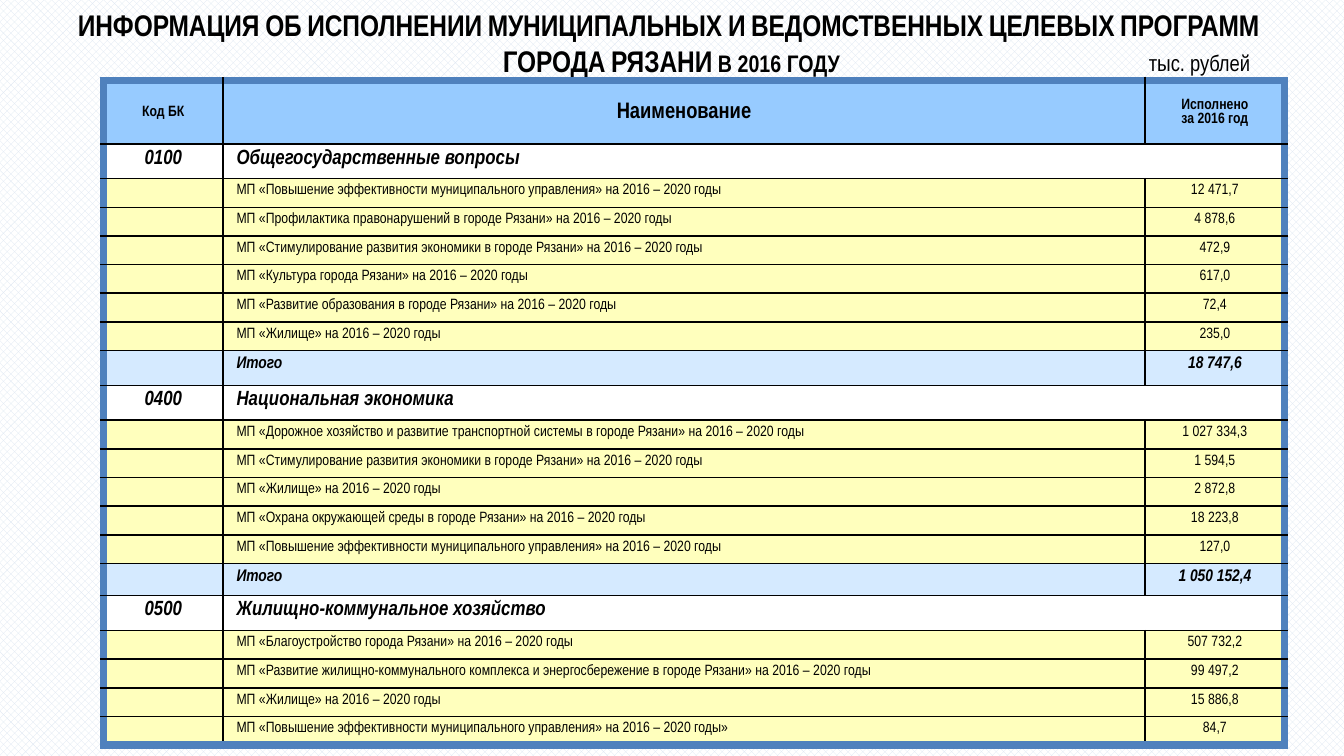
from dataclasses import dataclass

from lxml.etree import SubElement
from pptx import Presentation
from pptx.dml.color import RGBColor
from pptx.enum.dml import MSO_PATTERN
from pptx.enum.text import MSO_ANCHOR, MSO_AUTO_SIZE, PP_ALIGN
from pptx.oxml.ns import qn
from pptx.util import Inches, Pt

FONT = "Arial Narrow"
BLACK = RGBColor(0x00, 0x00, 0x00)
WHITE = RGBColor(0xFF, 0xFF, 0xFF)
FRAME_BLUE = RGBColor(0x4F, 0x81, 0xBD)
HEADER_BLUE = RGBColor(0x97, 0xCB, 0xFF)
TOTAL_BLUE = RGBColor(0xD5, 0xEA, 0xFF)
PROGRAM_YELLOW = RGBColor(0xFF, 0xFF, 0xBD)
PATTERN_BLUE = RGBColor(0xDC, 0xE6, 0xF2)

SLIDE_WIDTH = 10
SLIDE_HEIGHT = SLIDE_WIDTH * 9 / 16
TABLE_HEIGHT = 4.95
COLUMN_WIDTHS = (0.89, 6.86, 1.04)
ALIGNMENTS = (PP_ALIGN.CENTER, PP_ALIGN.LEFT, PP_ALIGN.CENTER)


@dataclass(frozen=True)
class RowStyle:
    fill: RGBColor
    sizes: tuple[float, float, float]
    bold: bool = False
    italic: bool = False


@dataclass(frozen=True)
class Row:
    style: RowStyle
    texts: tuple[str, str, str]
    height: float = 0  # zero: an equal share of the height left over


HEADER = RowStyle(HEADER_BLUE, (8, 12, 8), bold=True)
SECTION = RowStyle(WHITE, (11, 11, 11), bold=True, italic=True)
PROGRAM = RowStyle(PROGRAM_YELLOW, (8, 8, 8))
TOTAL = RowStyle(TOTAL_BLUE, (9, 9, 9), bold=True, italic=True)


def section(code: str, name: str) -> Row:
    return Row(SECTION, (code, name, ""), 0.26)


def program(name: str, amount: str, ending: str = "") -> Row:
    return Row(PROGRAM, ("", f"МП «{name}» на 2016 – 2020 годы{ending}", amount))


def total(amount: str, height: float) -> Row:
    return Row(TOTAL, ("", "Итого", amount), height)


MANAGEMENT = "Повышение эффективности муниципального управления"
ECONOMY = "Стимулирование развития экономики в городе Рязани"
HOUSING = "Жилище"

ROWS = (
    Row(HEADER, ("Код БК", "Наименование", "Исполнено\nза 2016 год"), 0.47),
    section("0100", "Общегосударственные вопросы"),
    program(MANAGEMENT, "12 471,7"),
    program("Профилактика правонарушений в городе Рязани", "4 878,6"),
    program(ECONOMY, "472,9"),
    program("Культура города Рязани", "617,0"),
    program("Развитие образования в городе Рязани", "72,4"),
    program(HOUSING, "235,0"),
    total("18 747,6", 0.26),
    section("0400", "Национальная экономика"),
    program("Дорожное хозяйство и развитие транспортной системы в городе Рязани",
            "1 027 334,3"),
    program(ECONOMY, "1 594,5"),
    program(HOUSING, "2 872,8"),
    program("Охрана окружающей среды в городе Рязани", "18 223,8"),
    program(MANAGEMENT, "127,0"),
    total("1 050 152,4", 0.24),
    section("0500", "Жилищно-коммунальное хозяйство"),
    program("Благоустройство города Рязани", "507 732,2"),
    program("Развитие жилищно-коммунального комплекса и энергосбережение "
            "в городе Рязани", "99 497,2"),
    program(HOUSING, "15 886,8"),
    program(MANAGEMENT, "84,7", ending="»"),
)


def format_paragraph(p, size: float, align: PP_ALIGN, bold: bool = False,
                     italic: bool = False) -> None:
    p.alignment = align
    f = p.font
    f.name, f.size, f.bold, f.italic = FONT, Pt(size), bold, italic
    f.color.rgb = BLACK


def set_borders(cell, outer: dict[str, bool]) -> None:
    """Draw the table's outer edges thick and blue, the inner ones thin and black."""
    tc_pr = cell._tc.get_or_add_tcPr()
    for i, (side, is_outer) in enumerate(outer.items()):
        color, width = (FRAME_BLUE, 4.5) if is_outer else (BLACK, 1)
        ln = SubElement(tc_pr, qn(f"a:{side}"), w=str(Pt(width)))
        fill = SubElement(ln, qn("a:solidFill"))
        SubElement(fill, qn("a:srgbClr"), val=str(color))
        tc_pr.insert(i, ln)


def fill_cell(cell, text: str, style: RowStyle, column: int) -> None:
    cell.fill.solid()
    cell.fill.fore_color.rgb = style.fill
    cell.margin_left = cell.margin_right = Inches(0.1)
    cell.margin_top = cell.margin_bottom = Inches(0.04)
    cell.vertical_anchor = MSO_ANCHOR.MIDDLE if style is HEADER else MSO_ANCHOR.TOP
    cell.text_frame.text = text
    align = PP_ALIGN.CENTER if style is HEADER else ALIGNMENTS[column]
    for p in cell.text_frame.paragraphs:
        format_paragraph(p, style.sizes[column], align, style.bold, style.italic)


def add_program_table(s) -> None:
    table = s.shapes.add_table(
        len(ROWS), len(COLUMN_WIDTHS), Inches(0.77), Inches(0.6),
        Inches(sum(COLUMN_WIDTHS)), Inches(TABLE_HEIGHT)).table
    table.first_row = table.horz_banding = False
    for column, width in zip(table.columns, COLUMN_WIDTHS):
        column.width = Inches(width)

    free_height = TABLE_HEIGHT - sum(row.height for row in ROWS)
    program_height = free_height / sum(row.style is PROGRAM for row in ROWS)
    last_row, last_column = len(ROWS) - 1, len(COLUMN_WIDTHS) - 1
    for i, row in enumerate(ROWS):
        table.rows[i].height = Inches(row.height or program_height)
        if row.style is SECTION:
            table.cell(i, 1).merge(table.cell(i, last_column))
        for j, text in enumerate(row.texts):
            cell = table.cell(i, j)
            if cell.is_spanned:
                continue
            fill_cell(cell, text, row.style, j)
            set_borders(cell, {
                "lnL": j == 0,
                "lnR": j == last_column or cell.is_merge_origin,
                "lnT": i == 0,
                "lnB": i == last_row,
            })


def add_title(s) -> None:
    title = s.shapes.title
    title.left, title.top = Inches(0), Inches(0)
    title.width, title.height = Inches(9.99), Inches(0.48)
    tf = title.text_frame
    tf.auto_size = MSO_AUTO_SIZE.NONE
    tf.vertical_anchor = MSO_ANCHOR.TOP
    tf.text = ("ИНФОРМАЦИЯ ОБ ИСПОЛНЕНИИ МУНИЦИПАЛЬНЫХ И ВЕДОМСТВЕННЫХ "
               "ЦЕЛЕВЫХ ПРОГРАММ \vГОРОДА РЯЗАНИ в 2016 году")
    p = tf.paragraphs[0]
    format_paragraph(p, 16, PP_ALIGN.CENTER, bold=True)
    for r in p.runs:
        r.font.size = Pt(16)
        r._r.get_or_add_rPr().set("cap", "small")


def add_unit_label(s) -> None:
    tf = s.shapes.add_textbox(
        Inches(8.15), Inches(0.33), Inches(1.55), Inches(0.27)).text_frame
    tf.word_wrap = True
    tf.vertical_anchor = MSO_ANCHOR.MIDDLE
    tf.text = "тыс. рублей"
    format_paragraph(tf.paragraphs[0], 12, PP_ALIGN.CENTER)


def main() -> None:
    prs = Presentation()
    prs.slide_width, prs.slide_height = Inches(SLIDE_WIDTH), Inches(SLIDE_HEIGHT)
    s = prs.slides.add_slide(prs.slide_layouts[5])
    background = s.background.fill
    background.patterned()
    background.pattern = MSO_PATTERN.LARGE_CHECKER_BOARD
    background.fore_color.rgb = PATTERN_BLUE
    background.back_color.rgb = WHITE
    add_title(s)
    add_program_table(s)
    add_unit_label(s)
    prs.save("out.pptx")


if __name__ == "__main__":
    main()
